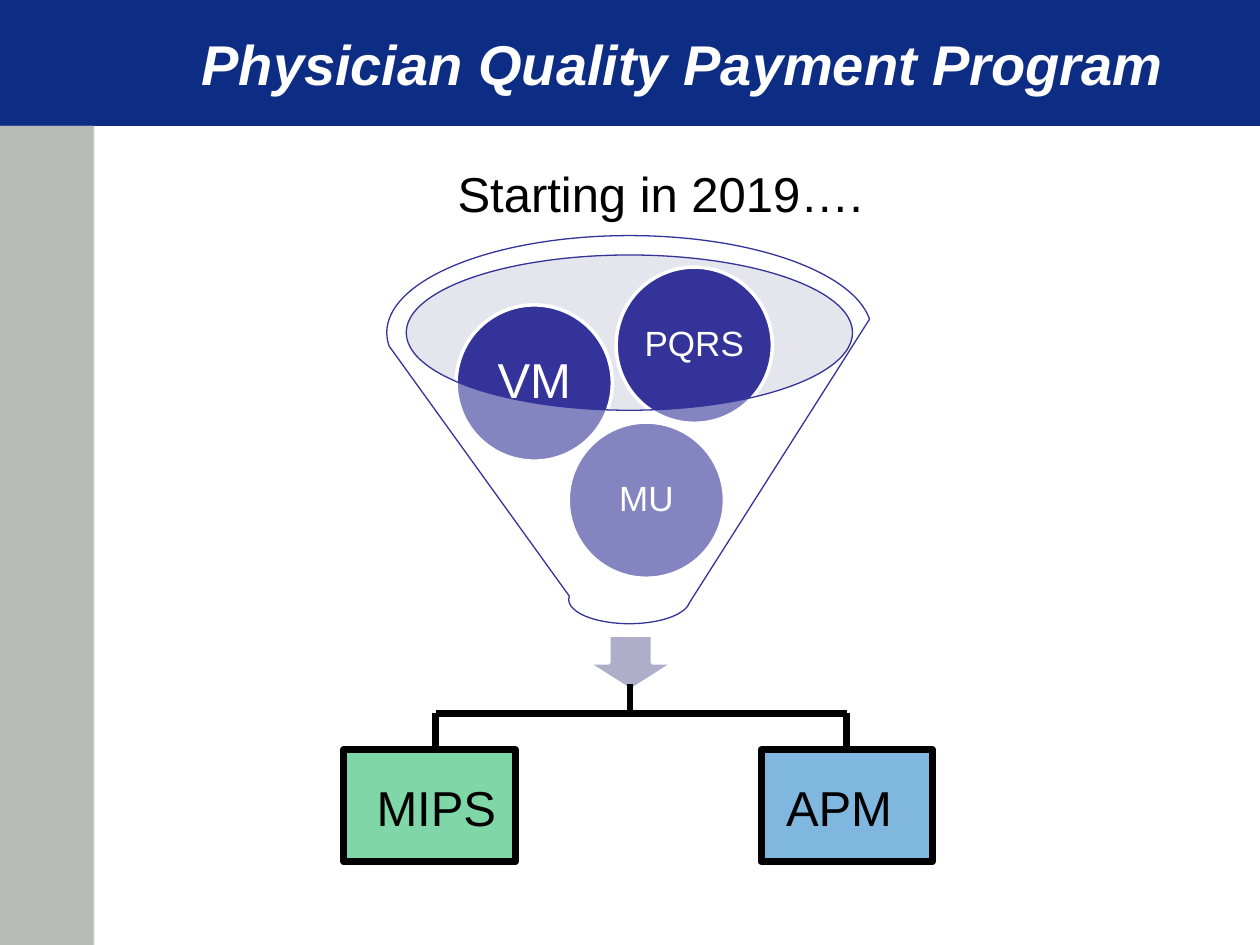
from dataclasses import dataclass
from typing import Optional

from lxml.etree import SubElement
from pptx import Presentation
from pptx.dml.color import RGBColor
from pptx.enum.shapes import MSO_CONNECTOR as Line, MSO_SHAPE as Shape
from pptx.enum.text import MSO_ANCHOR as Anchor, MSO_AUTO_SIZE as Fit, PP_ALIGN as Align
from pptx.oxml.ns import qn
from pptx.util import Inches, Pt

COLS, ROWS = 100, 75
WIDTH, HEIGHT = Inches(10), Inches(7.5)
NAVY, INDIGO, WHITE, BLACK = "0C2D83", "333399", "FFFFFF", "000000"


@dataclass(frozen=True)
class Box:
    x: float
    y: float
    w: float
    h: float

    def inset(self, d: float) -> "Box":
        return Box(self.x + d, self.y + d, self.w - 2 * d, self.h - 2 * d)


@dataclass(frozen=True)
class Figure:
    kind: Shape
    box: Box
    fill: str
    alpha: int = 100
    line: Optional[str] = None
    weight: float = 2


@dataclass(frozen=True)
class Ball:
    text: str
    x: float
    y: float
    size: int


@dataclass(frozen=True)
class Outcome:
    text: str
    x: float
    text_x: float
    drop_x: float
    fill: str


def col(n: float) -> int:
    return round(n * WIDTH / COLS)


def row(n: float) -> int:
    return round(n * HEIGHT / ROWS)


def place(box: Box) -> tuple[int, int, int, int]:
    return col(box.x), row(box.y), col(box.w), row(box.h)


def rgb(value: str) -> RGBColor:
    return RGBColor.from_string(value)


def add_figure(shapes, f: Figure):
    s = shapes.add_shape(f.kind, *place(f.box))
    s.shadow.inherit = False
    s.fill.solid()
    s.fill.fore_color.rgb = rgb(f.fill)
    if f.alpha < 100:
        clr = s.fill._xPr.find(qn("a:solidFill"))[0]
        SubElement(clr, qn("a:alpha"), val=str(f.alpha * 1000))
    if f.line:
        s.line.color.rgb = rgb(f.line)
        s.line.width = Pt(f.weight)
    else:
        s.line.fill.background()
    return s


def add_text(shapes, text: str, box: Box, size: int, color: str = BLACK,
             align: Align = Align.CENTER, anchor: Anchor = Anchor.TOP,
             fit: Fit = Fit.NONE):
    s = shapes.add_textbox(*place(box))
    tf = s.text_frame
    tf.text = text
    tf.word_wrap = True
    tf.auto_size = fit
    tf.vertical_anchor = anchor
    p = tf.paragraphs[0]
    p.alignment = align
    r = p.runs[0]
    r.font.name = "Arial"
    r.font.size = Pt(size)
    r.font.color.rgb = rgb(color)
    return s


def add_line(shapes, x1: float, y1: float, x2: float, y2: float):
    s = shapes.add_connector(Line.STRAIGHT, col(x1), row(y1), col(x2), row(y2))
    s.line.color.rgb = rgb(BLACK)
    s.line.width = Pt(4)
    SubElement(s._element.spPr, qn("a:effectLst"))
    return s


def add_ball(shapes, ball: Ball) -> None:
    box = Box(ball.x, ball.y, 12.4, 12.4)
    add_figure(shapes, Figure(Shape.OVAL, box, INDIGO, line=WHITE))
    s = add_text(shapes, ball.text, box.inset(1.8), ball.size, WHITE, anchor=Anchor.MIDDLE)
    tf = s.text_frame
    tf.margin_left = tf.margin_right = tf.margin_top = tf.margin_bottom = Inches(0.03)
    tf.paragraphs[0].line_spacing = 0.9


def add_outcome(shapes, o: Outcome, bar_y: float) -> None:
    box = Box(o.x, 59.5, 13.6, 8.9)
    drop = add_line(shapes, o.drop_x, bar_y, o.drop_x, box.y)
    s = add_figure(shapes, Figure(Shape.RECTANGLE, box, o.fill, 50, BLACK, 4))
    if abs(box.x + box.w / 2 - o.drop_x) < 0.1:
        drop.end_connect(s, 0)
    add_text(shapes, o.text, Box(o.text_x, 61.2, 11.6, 5.7), 28,
             align=Align.LEFT, fit=Fit.SHAPE_TO_FIT_TEXT)


BANDS = [
    Figure(Shape.RECTANGLE, Box(0, 0, COLS, 10), NAVY),
    Figure(Shape.RECTANGLE, Box(0, 10, 7.5, 65), "CCCCCC"),
    Figure(Shape.RECTANGLE, Box(0, 10, 7.4, 65), "B7BAB5"),
]
MOUTH = Figure(Shape.OVAL, Box(32.2, 20.2, 35.5, 12.3), "BFBFD4", 40)
ARROW = Figure(Shape.DOWN_ARROW, Box(46.6, 50.4, 6.9, 4.4), "AEAECA", line=WHITE)
FUNNEL = Figure(Shape.FUNNEL, Box(30.7, 18.7, 38.5, 30.8), WHITE, 40, INDIGO, 0.75)
BALLS = [
    Ball("MU", 45.1, 33.5, 20),
    Ball("VM", 36.2, 24.2, 28),
    Ball("PQRS", 48.9, 21.2, 20),
]
OUTCOMES = [
    Outcome("MIPS", 27.3, 28.9, 34.6, "00B050"),
    Outcome("APM", 60.4, 61.4, 67.2, "0070C0"),
]


def main() -> None:
    prs = Presentation()
    prs.slide_width, prs.slide_height = WIDTH, HEIGHT
    shapes = prs.slides.add_slide(prs.slide_layouts[6]).shapes

    for band in BANDS:
        add_figure(shapes, band)
    title = add_text(shapes, "Physician Quality Payment Program",
                     Box(13.3, 0, 81.8, 10), 32, WHITE, anchor=Anchor.MIDDLE)
    font = title.text_frame.paragraphs[0].runs[0].font
    font.bold = font.italic = True

    add_figure(shapes, MOUTH)
    add_figure(shapes, ARROW)
    for ball in BALLS:
        add_ball(shapes, ball)
    add_figure(shapes, FUNNEL)

    bar_y = 56.6
    add_line(shapes, OUTCOMES[0].drop_x, bar_y, OUTCOMES[-1].drop_x, bar_y)
    add_line(shapes, COLS / 2, 54.3, COLS / 2, bar_y)
    for outcome in OUTCOMES:
        add_outcome(shapes, outcome, bar_y)

    add_text(shapes, "Starting in 2019….", Box(27.3, 12.5, 50.2, 5.7), 28,
             fit=Fit.SHAPE_TO_FIT_TEXT)
    prs.save("out.pptx")


if __name__ == "__main__":
    main()
